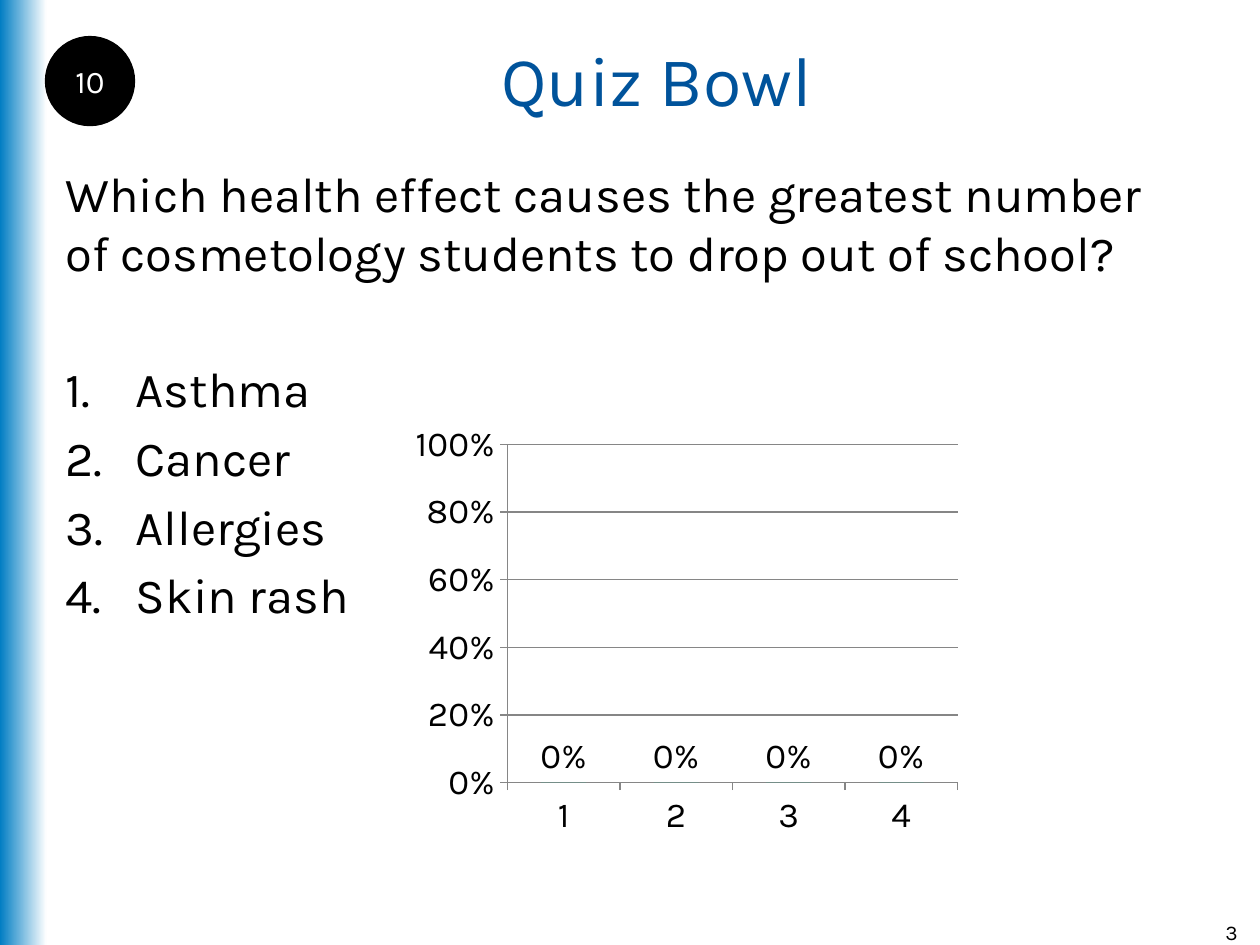
from lxml import etree
from pptx import Presentation
from pptx import util as u
from pptx.chart.data import CategoryChartData
from pptx.dml.color import RGBColor
from pptx.enum import chart as ch, shapes, text
from pptx.oxml.ns import qn

FONT = "Karla"
ALIGN = text.PP_ALIGN


def color(value):
    return RGBColor.from_string(value)


def write(frame, lines, size, ink="000000", align=ALIGN.LEFT, anchor=text.MSO_ANCHOR.TOP):
    frame.text = "\n".join(lines)
    frame.word_wrap = True
    frame.vertical_anchor = anchor
    for paragraph in frame.paragraphs:
        paragraph.alignment = align
        for run in paragraph.runs:
            run.font.name = FONT
            run.font.size = u.Pt(size)
            run.font.color.rgb = color(ink)


prs = Presentation()
prs.slide_width, prs.slide_height = u.Cm(25.4), u.Cm(19.05)
slide = prs.slides.add_slide(prs.slide_layouts[6])

side_band = slide.shapes.add_shape(
    shapes.MSO_SHAPE.RECTANGLE, 0, 0, u.Cm(0.94), prs.slide_height)
side_band.shadow.inherit = False
side_band.line.fill.background()
side_band.fill.gradient()
side_band.fill.gradient_angle = 0
for stop, value in zip(side_band.fill.gradient_stops, ("007DC3", "FFFFFF")):
    stop.color.rgb = color(value)

title = slide.shapes.add_textbox(u.Cm(1.07), 0, u.Cm(24.33), u.Cm(3.18))
write(title.text_frame, ["Quiz Bowl"], 40, "00539B", ALIGN.CENTER, text.MSO_ANCHOR.MIDDLE)

page_number = slide.shapes.add_textbox(u.Cm(23.93), u.Cm(18.42), u.Cm(1.27), u.Cm(0.64))
write(page_number.text_frame, ["3"], 12, align=ALIGN.RIGHT)

question = slide.shapes.add_textbox(u.Cm(1.07), u.Cm(3.18), u.Cm(23.29), u.Cm(1.9))
write(question.text_frame, [
    "Which health effect causes the greatest number of cosmetology students "
    "to drop out of school?"], 28)

answers = slide.shapes.add_textbox(u.Cm(1.07), u.Cm(7.11), u.Cm(11.38), u.Cm(10.59))
write(answers.text_frame, ["Asthma", "Cancer", "Allergies", "Skin rash"], 28)
for i, answer in enumerate(answers.text_frame.paragraphs):
    if i:
        answer.space_before = u.Pt(5.6)
    properties = answer._p.get_or_add_pPr()
    properties.set("marL", str(u.Cm(1.42)))
    properties.set("indent", str(-u.Cm(1.42)))
    etree.SubElement(properties, qn("a:buFont"), typeface="+mj-lt")
    etree.SubElement(properties, qn("a:buAutoNum"), type="arabicPeriod")

votes = CategoryChartData(number_format="0%")
votes.categories = ["1", "2", "3", "4"]
votes.add_series("Series 1", [0, 0, 0, 0])
chart = slide.shapes.add_chart(
    ch.XL_CHART_TYPE.COLUMN_CLUSTERED,
    u.Cm(8.15), u.Cm(8.36), u.Cm(11.38), u.Cm(8.69), votes).chart
chart.has_legend = False
chart.has_title = False
chart.font.name = FONT
chart.font.size = u.Pt(20)
chart.font.color.rgb = color("000000")

share_axis = chart.value_axis
share_axis.minimum_scale = 0
share_axis.maximum_scale = 1
share_axis.major_unit = 0.2
share_axis.has_major_gridlines = True
share_axis.tick_labels.number_format = "0%"
share_axis.tick_labels.number_format_is_linked = False
for axis in (share_axis, chart.category_axis):
    axis.major_tick_mark = ch.XL_TICK_MARK.OUTSIDE
for ruled in (share_axis, chart.category_axis, share_axis.major_gridlines):
    ruled.format.line.color.rgb = color("868686")
    ruled.format.line.width = u.Pt(0.75)

plot = chart.plots[0]
plot.gap_width = 150
plot.vary_by_categories = False
plot.series[0].format.fill.solid()
plot.series[0].format.fill.fore_color.rgb = color("00CC99")
labels = plot.series[0].data_labels
labels.show_value = True
labels.number_format = "0%"
labels.number_format_is_linked = False
labels.position = ch.XL_LABEL_POSITION.OUTSIDE_END

countdown = slide.shapes.add_shape(
    shapes.MSO_SHAPE.OVAL, u.Cm(0.94), u.Cm(0.76), u.Cm(1.75), u.Cm(1.75))
countdown.shadow.inherit = False
countdown.fill.solid()
countdown.fill.fore_color.rgb = color("000000")
countdown.line.color.rgb = color("000000")
countdown.line.width = u.Pt(2)
count = countdown.text_frame
write(count, ["10"], 18, "FFFFFF", ALIGN.CENTER, text.MSO_ANCHOR.MIDDLE)
count.word_wrap = False
count.margin_left = count.margin_right = count.margin_top = count.margin_bottom = 0

prs.save("out.pptx")
